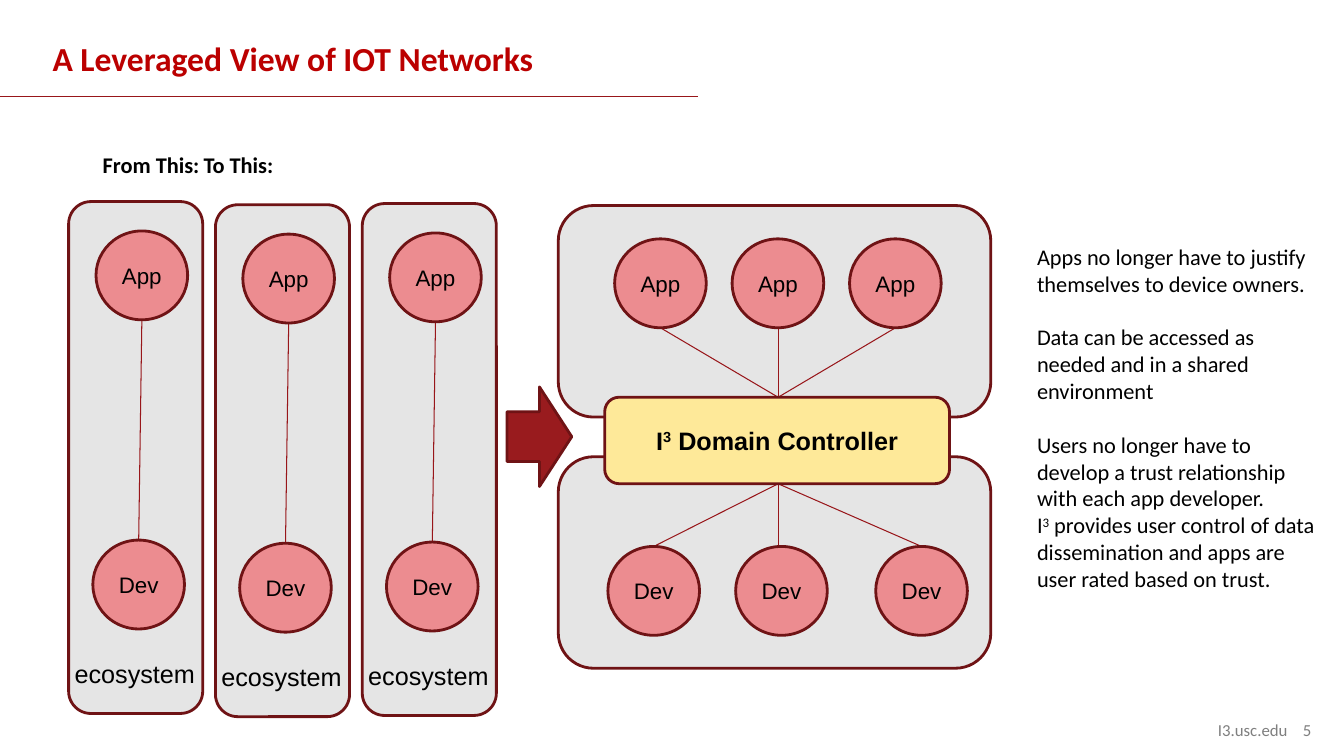
from lxml import etree
from pptx import Presentation
from pptx.dml.color import RGBColor
from pptx.enum.shapes import MSO_CONNECTOR, MSO_SHAPE
from pptx.enum.text import MSO_ANCHOR, MSO_AUTO_SIZE, PP_ALIGN
from pptx.oxml.ns import qn
from pptx.util import Cm, Pt

ROUND, OVAL, ARROW = MSO_SHAPE.ROUNDED_RECTANGLE, MSO_SHAPE.OVAL, MSO_SHAPE.RIGHT_ARROW
STRAIGHT = MSO_CONNECTOR.STRAIGHT
LEFT, MID, RIGHT = PP_ALIGN.LEFT, PP_ALIGN.CENTER, PP_ALIGN.RIGHT
TOP, CENTER = MSO_ANCHOR.TOP, MSO_ANCHOR.MIDDLE
FIXED = MSO_AUTO_SIZE.NONE

BLACK, GREY, PANEL = "000000", "7F7F7F", "E5E5E5"
PINK, YELLOW, EDGE, WIRE = "EC8C90", "FEE999", "6F1315", "98161A"
BALL_W, BALL_H = 2.31, 2.24

TITLE = dict(name="Calibri", size=Pt(24), bold=True)
HEAD = dict(name="Calibri", size=Pt(16), bold=True)
BODY = dict(name="Calibri", size=Pt(16), bold=False)
FOOT = dict(name="Calibri", size=Pt(12), bold=False)
NODE = dict(name="Arial", size=Pt(16), bold=False)
LABEL = dict(name="Arial", size=Pt(18), bold=False)
HUB = dict(name="Arial", size=Pt(18), bold=True)

NOTES = [
    ("Apps no longer have to justify themselves to device owners.", 0),
    ("Data can be accessed as needed and in a shared environment", 19.2),
    ("Users no longer have to develop a trust relationship "
     "with each app developer.", 19.2),
    ("I|3| provides user control of data dissemination "
     "and apps are user rated based on trust.", 0),
]


def color(code):
    return RGBColor.from_string(code)


def style(item, form):
    for key, value in form.items():
        setattr(item, key, value)


def write(para, text, form, code=BLACK, align=LEFT):
    """Fill a paragraph; text between bars is superscript."""
    para.alignment = align
    for i, part in enumerate(text.split("|")):
        run = para.add_run()
        run.text = part
        style(run.font, form)
        run.font.color.rgb = color(code)
        if i % 2:
            run.font._element.set("baseline", "30000")


def place(item, x, y, w, h):
    style(item, dict(left=Cm(x), top=Cm(y), width=Cm(w), height=Cm(h)))


def label(slide, box, text, form, code=BLACK, align=LEFT):
    item = slide.shapes.add_textbox(*map(Cm, box))
    item.text_frame.word_wrap = True
    write(item.text_frame.paragraphs[0], text, form, code, align)


def block(slide, kind, box, fill, text="", form=NODE):
    item = slide.shapes.add_shape(kind, *map(Cm, box))
    item.shadow.inherit = False
    item.fill.solid()
    item.fill.fore_color.rgb = color(fill)
    item.line.color.rgb = color(EDGE)
    item.line.width = Pt(2)
    if text:
        style(item.text_frame, dict(word_wrap=True, vertical_anchor=CENTER))
        write(item.text_frame.paragraphs[0], text, form, align=MID)


def ball(slide, x, y, text):
    block(slide, OVAL, (x, y, BALL_W, BALL_H), PINK, text)


def wire(slide, *ends):
    item = slide.shapes.add_connector(STRAIGHT, *map(Cm, ends))
    item.line.color.rgb = color(WIRE)
    item.line.width = Pt(0.75)
    etree.SubElement(item._element.spPr, qn("a:effectLst"))


def header(slide, x, y, w, h):
    title = slide.shapes.title
    place(title, x, y, w, h)
    style(title.text_frame, dict(vertical_anchor=CENTER, auto_size=FIXED))
    write(title.text_frame.paragraphs[0], "A Leveraged View of IOT Networks",
          TITLE, "BB0000")
    wire(slide, 0, y + 1.96, 17.6, y + 1.96)
    label(slide, (x + 1.27, y + 3.22, 30.45, 0.94), "From This:\tTo This:", HEAD)


def silo(slide, x, y, w, h):
    """One closed ecosystem: an app tied to its own device."""
    app_x, app_y = x + 0.69, y + 0.74
    dev_x, dev_y = x + 0.61, y + 8.53
    block(slide, ROUND, (x, y, w, h), PANEL)
    wire(slide, dev_x + BALL_W / 2, dev_y, app_x + BALL_W / 2, app_y + BALL_H)
    ball(slide, app_x, app_y, "App")
    ball(slide, dev_x, dev_y, "Dev")
    label(slide, (x - 0.1, y + 11.38, w + 0.2, 1.02), "ecosystem", LABEL)


def shared(slide, x, y, w, h):
    """Apps above and devices below, joined by one controller."""
    half = 5.33
    for top in (y, y + h - half):
        block(slide, ROUND, (x, top, w, half), PANEL)
    mid, hub, deep = x + 5.54, y + 4.83, 2.18
    app_y, dev_y = y + 0.84, y + 8.59
    apps = [x + 1.42 + 2.96 * i for i in range(3)]
    devs = [x + 1.25, x + 4.47, x + 8]
    wire(slide, mid, app_y + BALL_H, mid, dev_y + 0.2)
    for i in (0, 2):
        wire(slide, mid, hub, apps[i] + BALL_W / 2, app_y + BALL_H)
        wire(slide, mid, hub + deep, devs[i] + BALL_W / 2, dev_y)
    block(slide, ROUND, (x + 1.17, hub, 8.69, deep), YELLOW,
          "I|3| Domain Controller", HUB)
    for app, dev in zip(apps, devs):
        ball(slide, app, app_y, "App")
        ball(slide, dev, dev_y, "Dev")


def notes(slide, x, y, w, h):
    body = slide.placeholders[1]
    place(body, x, y, w, h)
    frame = body.text_frame
    style(frame, dict(word_wrap=True, vertical_anchor=TOP, auto_size=FIXED))
    for i, (text, gap) in enumerate(NOTES):
        para = frame.add_paragraph() if i else frame.paragraphs[0]
        props = para._p.get_or_add_pPr()
        props.set("marL", "0")
        props.set("indent", "0")
        etree.SubElement(props, qn("a:buNone"))
        para.space_before = Pt(gap)
        write(para, text, BODY)


def footer(slide, x, y, w, h):
    label(slide, (x, y, w - 0.6, h), "I3.usc.edu", FOOT, GREY, RIGHT)
    label(slide, (x + w - 1.5, y, 1.5, h), "5", FOOT, GREY, RIGHT)


def main():
    deck = Presentation()
    deck.slide_width, deck.slide_height = Cm(33.87), Cm(19.05)
    slide = deck.slides.add_slide(deck.slide_layouts[1])
    header(slide, 1.07, 0.46, 29.21, 2.03)
    for i, top in enumerate((5.08, 5.16, 5.13)):
        silo(slide, 1.73 + 3.7 * i, top, 3.38, 12.9)
    shared(slide, 14.07, 5.18, 10.9, 11.66)
    block(slide, ARROW, (12.78, 9.75, 1.63, 2.51), "991B1E")
    notes(slide, 25.88, 5.99, 7.7, 9.14)
    footer(slide, 22.58, 18.01, 10.72, 1.02)
    deck.save("out.pptx")


if __name__ == "__main__":
    main()
